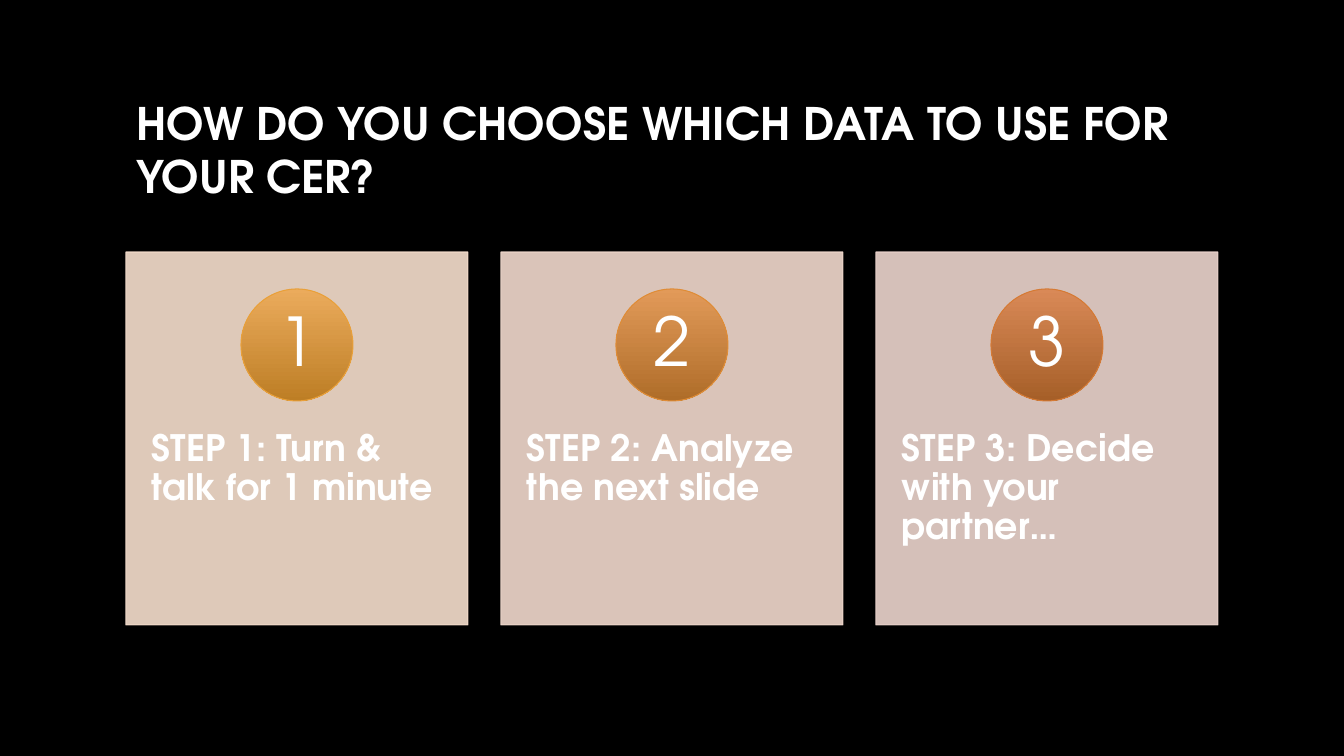
from pptx import Presentation
from pptx import util as u
from pptx.dml.color import RGBColor
from pptx.enum import shapes, text
from pptx.oxml import ns
from lxml import etree

PX = 914400 / 100.8
FONT = "TeX Gyre Adventor"
BLACK = RGBColor(0x00, 0x00, 0x00)
WHITE = RGBColor(0xFF, 0xFF, 0xFF)

# Step text, card colour, circle gradient top and bottom, circle outline
STEPS = [
    ("STEP 1: Turn & talk for 1 minute", RGBColor(0xF7, 0xDF, 0xCE),
     RGBColor(0xEB, 0xAB, 0x5C), RGBColor(0xBD, 0x7E, 0x25), RGBColor(0xE9, 0xA0, 0x39)),
    ("STEP 2: Analyze the next slide", RGBColor(0xF2, 0xDA, 0xCE),
     RGBColor(0xE2, 0x9A, 0x59), RGBColor(0xAF, 0x6D, 0x29), RGBColor(0xDF, 0x8C, 0x36)),
    ("STEP 3: Decide with your partner…", RGBColor(0xED, 0xD5, 0xCE),
     RGBColor(0xD9, 0x89, 0x57), RGBColor(0xA6, 0x5F, 0x28), RGBColor(0xD5, 0x7A, 0x34)),
]
CARD_LEFT, CARD_TOP, CARD_WIDTH, CARD_HEIGHT = 126, 252, 342, 373
CARD_PITCH = 375
CIRCLE_SIZE, CIRCLE_TOP = 112, 289
NUMBER_SIZE = 80


def px(*lengths):
    return [u.Emu(round(length * PX)) for length in lengths]


def format_text(frame, size, bold, align, spacing):
    frame.word_wrap = True
    for paragraph in frame.paragraphs:
        paragraph.alignment = align
        paragraph.line_spacing = spacing
        for run in paragraph.runs:
            run.font.name = FONT
            run.font.size = u.Pt(size)
            run.font.bold = bold
            run.font.color.rgb = WHITE


def add_title(slide, wording):
    title = slide.shapes.title
    title.left, title.top, title.width, title.height = px(126, 68, 1092, 162)
    frame = title.text_frame
    frame.text = wording
    frame.auto_size = text.MSO_AUTO_SIZE.NONE
    frame.vertical_anchor = text.MSO_ANCHOR.MIDDLE
    format_text(frame, 32, True, text.PP_ALIGN.LEFT, 1.0)


def add_text(slide, box, wording, size, bold, align, anchor, inset_x, inset_y):
    frame = slide.shapes.add_textbox(*px(*box)).text_frame
    frame.text = wording
    frame.vertical_anchor = anchor
    frame.margin_left, frame.margin_right = px(inset_x, inset_x)
    frame.margin_top, frame.margin_bottom = px(inset_y, inset_y)
    format_text(frame, size, bold, align, 0.9)


def add_outlined(slide, kind, box, line_color):
    shape = slide.shapes.add_shape(kind, *px(*box))
    shape.shadow.inherit = False
    shape.line.color.rgb = line_color
    shape.line.width = u.Pt(0.75)
    return shape


def add_card(slide, left, color):
    box = (left, CARD_TOP, CARD_WIDTH, CARD_HEIGHT)
    card = add_outlined(slide, shapes.MSO_SHAPE.RECTANGLE, box, color)
    card.fill.solid()
    card.fill.fore_color.rgb = color
    # Fill and outline are both 90% opaque
    for color_node in card.element.spPr.iter(ns.qn("a:srgbClr")):
        etree.SubElement(color_node, ns.qn("a:alpha"), val="90000")


def add_circle(slide, left, top_color, bottom_color, line_color):
    box = (left, CIRCLE_TOP, CIRCLE_SIZE, CIRCLE_SIZE)
    circle = add_outlined(slide, shapes.MSO_SHAPE.OVAL, box, line_color)
    circle.fill.gradient()
    circle.fill.gradient_angle = 270
    for stop, color in zip(circle.fill.gradient_stops, (top_color, bottom_color)):
        stop.color.rgb = color


def add_step(slide, index, wording, card_color, top_color, bottom_color, line_color):
    left = CARD_LEFT + index * CARD_PITCH
    add_card(slide, left, card_color)
    add_text(slide, (left, 394, CARD_WIDTH, 224), wording, 26, True,
             text.PP_ALIGN.LEFT, text.MSO_ANCHOR.TOP, 26, 36)

    # Numbered circle, centred across the card
    circle_left = left + (CARD_WIDTH - CIRCLE_SIZE) // 2
    add_circle(slide, circle_left, top_color, bottom_color, line_color)
    inset = (CIRCLE_SIZE - NUMBER_SIZE) // 2
    number_box = (circle_left + inset, CIRCLE_TOP + inset, NUMBER_SIZE, NUMBER_SIZE)
    add_text(slide, number_box, str(index + 1), 48, False,
             text.PP_ALIGN.CENTER, text.MSO_ANCHOR.MIDDLE, 9, 1)


def main():
    presentation = Presentation()
    presentation.slide_width, presentation.slide_height = px(1344, 756)
    slide = presentation.slides.add_slide(presentation.slide_layouts[5])

    # Background and title
    slide.background.fill.solid()
    slide.background.fill.fore_color.rgb = BLACK
    add_title(slide, "HOW DO YOU CHOOSE WHICH DATA TO USE FOR YOUR CER?")

    # Three step cards
    for index, step in enumerate(STEPS):
        add_step(slide, index, *step)

    presentation.save("out.pptx")


if __name__ == "__main__":
    main()
